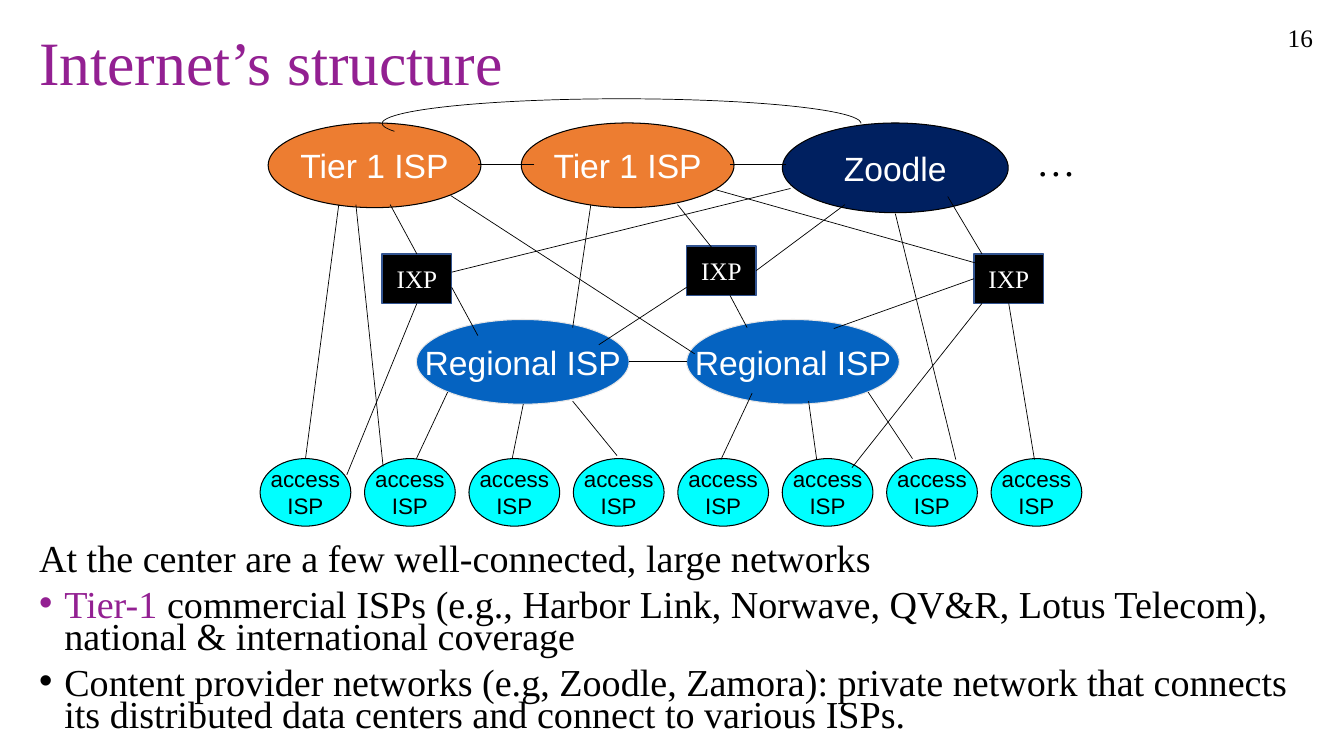
import pptx
import pptx.util
import pptx.dml.color
import pptx.enum.shapes
import pptx.enum.text
import pptx.oxml.ns
import lxml.etree

HUES = {
    "ink": "000000", "white": "FFFFFF", "plum": "932092", "cyan": "00FFFF",
    "blue": "0563C1", "pale": "E7E6E6", "orange": "ED7D31", "navy": "002060",
    "edge": "325491",
}
SERIF, SANS = "Times New Roman", "Arial"

PAGE = "16"
TITLE = "Internet’s structure"
LEAD = "At the center are a few well-connected, large networks"
POINTS = [
    [("Tier-1", "plum"),
     (" commercial ISPs (e.g., Harbor Link, Norwave, QV&R, Lotus Telecom), "
      "national & international coverage", "ink")],
    [("Content provider networks (e.g, Zoodle, Zamora): private network that "
      "connects its distributed data centers and connect to various ISPs.", "ink")],
]
MORE = "…"

ACCESS = {"text": ["access", "ISP"], "count": 8, "first": 2.58, "last": 9.83,
          "top": 4.55, "size": (0.9, 0.67)}
CLOUDS = [
    ("Regional ISP", (4.13, 3.17, 2.11, 0.84), "blue", "pale"),
    ("Regional ISP", (6.81, 3.17, 2.11, 0.84), "blue", "pale"),
    ("Tier 1 ISP", (2.66, 1.22, 2.11, 0.84), "orange", "ink"),
    ("Tier 1 ISP", (5.17, 1.22, 2.11, 0.84), "orange", "ink"),
    ("Zoodle", (7.76, 1.22, 2.24, 0.89), "navy", "ink"),
]
IXPS = {"west": (3.79, 2.52), "mid": (6.81, 2.44), "east": (9.66, 2.52)}
IXP_SIZE = (0.69, 0.49)
ARC = (3.79, 0.98, 4.75, 0.49)
ARC_ENDS = (106.819, 0)

LINKS = [
    (3.36, 2.03, 3.03, 4.55), (5.19, 4.01, 5.08, 4.55),
    (4.44, 3.89, 4.13, 4.55), (3.53, 2.03, 3.8, 4.63),
    (5.68, 3.98, 6.12, 4.52), (6.81, 3.59, 6.24, 3.59),
    (7.46, 3.9, 7.15, 4.56), (8.02, 3.98, 8.1, 4.56),
    (8.61, 3.89, 9.05, 4.55), (8.88, 2.12, 9.48, 4.56),
    (5.3, 1.63, 4.74, 1.63), (7.8, 1.63, 7.24, 1.63),
    (9.4, 1.95, 9.74, 2.52), (4.48, 2.85, 4.74, 3.33),
    (7.84, 1.87, 4.48, 2.7), (6.72, 2.03, 7.15, 2.57),
    (5.86, 2.03, 5.68, 3.25), (7.24, 2.93, 7.41, 3.25),
    (6.81, 2.85, 5.94, 3.42), (4.47, 1.94, 6.89, 3.51),
    (9.74, 3.01, 8.45, 4.64), (7.09, 1.88, 9.68, 2.61),
]
JOINED = [
    ("west", 2, (3.44, 4.71)), ("west", 0, (3.87, 2.03)),
    ("east", 2, (10.26, 4.56)), ("east", 1, (8.27, 3.26)),
    ("mid", 3, (8.38, 2.03)),
]

Inches, Pt = pptx.util.Inches, pptx.util.Pt
KIND = pptx.enum.shapes.MSO_SHAPE
ALIGN = pptx.enum.text.PP_ALIGN
ANCHOR = pptx.enum.text.MSO_ANCHOR
qn = pptx.oxml.ns.qn

deck = pptx.Presentation()
deck.slide_width, deck.slide_height = Inches(13.33), Inches(7.5)
slide = deck.slides.add_slide(deck.slide_layouts[6])
shapes = slide.shapes


def hue(name):
    return pptx.dml.color.RGBColor.from_string(HUES[name])


def write(shape, paras, size, font=SERIF, color="ink", align=ALIGN.LEFT,
          anchor=ANCHOR.TOP, wrap=True, lead=None, before=None, dots=()):
    frame = shape.text_frame
    frame.word_wrap, frame.vertical_anchor = wrap, anchor
    for i, runs in enumerate(paras):
        para = frame.paragraphs[0] if i == 0 else frame.add_paragraph()
        para.alignment = align
        para.line_spacing = lead
        para.space_before = before
        if i in dots:
            props = para._p.get_or_add_pPr()
            props.set("marL", str(Inches(0.25)))
            props.set("indent", str(-Inches(0.25)))
            face = lxml.etree.SubElement(props, qn("a:buFont"))
            face.set("typeface", SANS)
            lxml.etree.SubElement(props, qn("a:buChar")).set("char", "•")
        for text, tint in [(runs, color)] if isinstance(runs, str) else runs:
            run = para.add_run()
            run.text = text
            run.font.size, run.font.name = Pt(size), font
            run.font.color.rgb = hue(tint)


def box(place, paras, size, **form):
    write(shapes.add_textbox(*map(Inches, place)), paras, size, **form)


def draw(kind, place, fill, line, width):
    shape = shapes.add_shape(kind, *map(Inches, place))
    shape.shadow.inherit = False
    if fill:
        shape.fill.solid()
        shape.fill.fore_color.rgb = hue(fill)
    else:
        shape.fill.background()
    shape.line.color.rgb = hue(line)
    shape.line.width = Pt(width)
    return shape


def link(x1, y1, x2, y2):
    line = shapes.add_connector(pptx.enum.shapes.MSO_CONNECTOR.STRAIGHT,
                                *map(Inches, (x1, y1, x2, y2)))
    line.line.color.rgb = hue("ink")
    line.line.width = Pt(0.5)
    lxml.etree.SubElement(line._element.spPr, qn("a:effectLst"))
    return line


box((12.46, 0.17, 0.66, 0.4), [PAGE], 18, align=ALIGN.RIGHT)
box((0.29, 0.17, 12.73, 0.97), [TITLE], 44, color="plum",
    anchor=ANCHOR.MIDDLE, lead=0.9)
box((0.29, 5.38, 12.73, 1.99), [LEAD] + POINTS, 27.2, lead=0.7,
    before=Pt(10), dots=(1, 2))

mid = {"align": ALIGN.CENTER, "anchor": ANCHOR.MIDDLE}
step = (ACCESS["last"] - ACCESS["first"]) / (ACCESS["count"] - 1)
for i in range(ACCESS["count"]):
    place = (ACCESS["first"] + i * step, ACCESS["top"], *ACCESS["size"])
    node = draw(KIND.OVAL, place, "cyan", "ink", 0.75)
    write(node, ACCESS["text"], 16, font=SANS, wrap=False, **mid)

for name, place, fill, edge in CLOUDS:
    node = draw(KIND.OVAL, place, fill, edge, 0.75)
    write(node, [name], 24, font=SANS, color="white", wrap=False, **mid)

hubs = {}
for name, spot in IXPS.items():
    hubs[name] = draw(KIND.RECTANGLE, spot + IXP_SIZE, "ink", "edge", 1)
    write(hubs[name], ["IXP"], 18, color="white", **mid)

for ends in LINKS:
    link(*ends)
for name, side, end in JOINED:
    link(*IXPS[name], *end).begin_connect(hubs[name], side)

arc = draw(KIND.ARC, ARC, None, "ink", 0.5)
for i, turn in enumerate(ARC_ENDS):
    arc.adjustments[i] = turn

box((10.18, 1.31, 1.29, 0.57), [MORE], 28)

deck.save("out.pptx")
